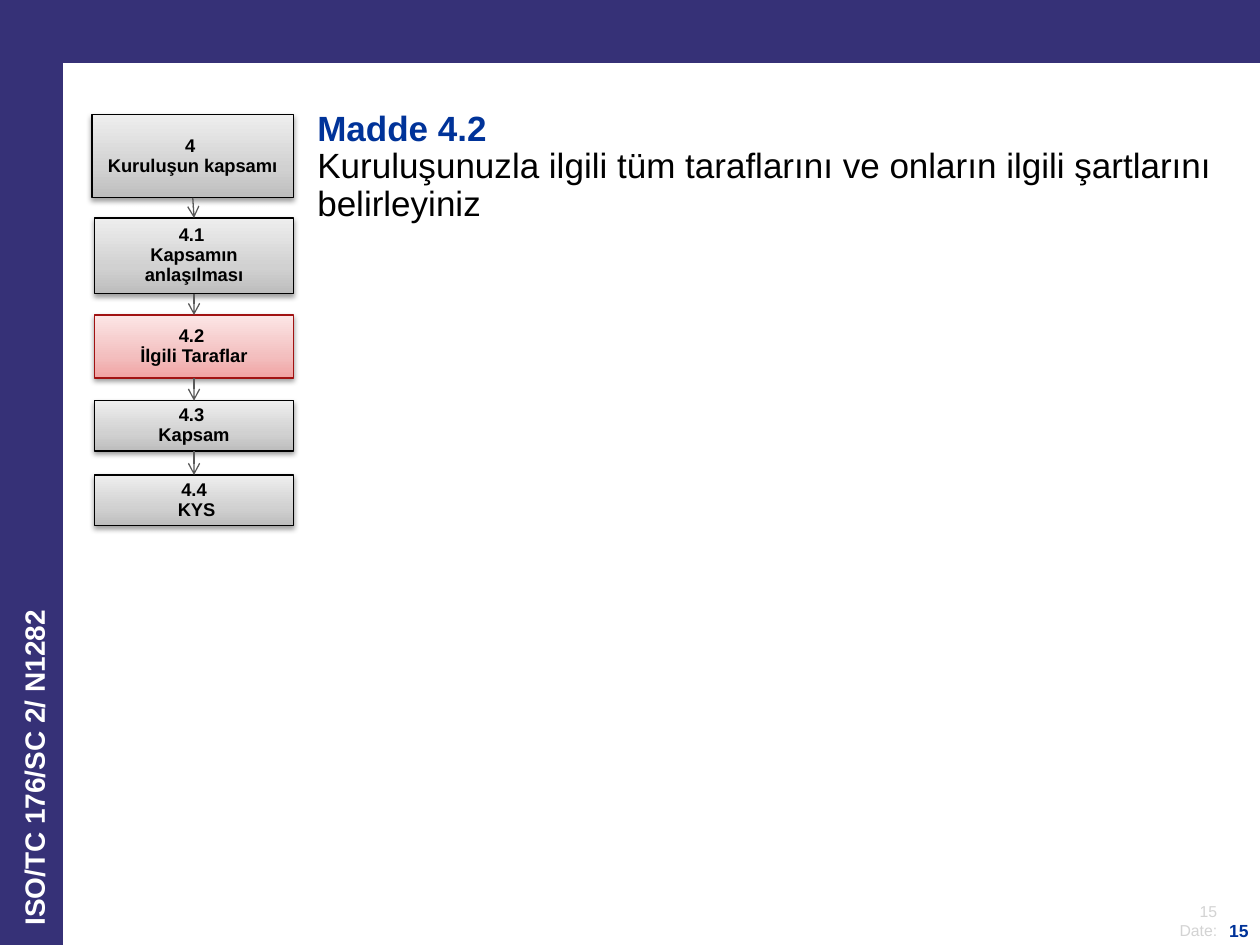
"""Build the clause 4.2 slide with its flow of clause boxes."""
from copy import deepcopy

from lxml import etree
from pptx import Presentation
from pptx import util as u
from pptx.dml.color import RGBColor
from pptx.enum import shapes, text
from pptx.oxml.ns import qn

COLORS = {
    "band": "363177", "title": "003399", "text": "000000", "white": "FFFFFF",
    "faint": "D3D3D3", "arrow": "595959", "current": "A11212",
}
GREY_STOPS = ("BDBDBD", "D1D1D1", "EEEEEE")
RED_STOPS = ("F1A3A3", "F3BFBF", "FCE6E6")
STOP_POSITIONS = (0, 0.35, 1)


class SlideBuilder:
    def __init__(self, slide, font="Arial"):
        self.slide = slide
        self.font = font

    def color(self, name):
        return RGBColor.from_string(COLORS[name])

    def add_lines(self, frame, lines, align, spacing=None):
        for index, (words, size, color, bold) in enumerate(lines):
            paragraph = frame.paragraphs[0] if index == 0 else frame.add_paragraph()
            paragraph.alignment = align
            paragraph.line_spacing = spacing
            run = paragraph.add_run()
            run.text = words
            run.font.name = self.font
            run.font.size = u.Pt(size)
            run.font.bold = bold
            run.font.color.rgb = self.color(color)

    def set_margins(self, frame, horizontal, vertical):
        frame.margin_left = frame.margin_right = u.Inches(horizontal)
        frame.margin_top = frame.margin_bottom = u.Inches(vertical)

    def rectangle(self, left, top, width, height):
        shape = self.slide.shapes.add_shape(
            shapes.MSO_SHAPE.RECTANGLE, *map(u.Inches, (left, top, width, height)))
        shape.shadow.inherit = False
        return shape

    def band(self, *place):
        shape = self.rectangle(*place)
        shape.fill.solid()
        shape.fill.fore_color.rgb = self.color("band")
        shape.line.fill.background()

    def label(self, place, lines, align=text.PP_ALIGN.LEFT, spacing=None,
              margins=(0.09, 0.04), wrap=True, rotation=0):
        box = self.slide.shapes.add_textbox(*map(u.Inches, place))
        box.rotation = rotation
        frame = box.text_frame
        frame.word_wrap = wrap
        self.set_margins(frame, *margins)
        self.add_lines(frame, lines, align, spacing)
        return frame

    def page_label(self, place, lines):
        frame = self.label(place, lines, text.PP_ALIGN.RIGHT, wrap=False)
        frame.auto_size = text.MSO_AUTO_SIZE.SHAPE_TO_FIT_TEXT
        frame.vertical_anchor = text.MSO_ANCHOR.BOTTOM

    def clause_box(self, place, lines, stops, line_color):
        shape = self.rectangle(*place)
        shape.fill.gradient()
        shape.fill.gradient_angle = 90
        stop_list = shape._element.spPr.find(".//" + qn("a:gsLst"))
        stop_list.insert(1, deepcopy(stop_list[0]))
        for stop, value, position in zip(shape.fill.gradient_stops, stops, STOP_POSITIONS):
            stop.color.rgb = RGBColor.from_string(value)
            stop.position = position
        shape.line.color.rgb = self.color(line_color)
        shape.line.width = u.Pt(0.75)
        self.drop_shadow(shape)
        frame = shape.text_frame
        frame.word_wrap = True
        frame.vertical_anchor = text.MSO_ANCHOR.MIDDLE
        self.set_margins(frame, 0.05, 0.05)
        self.add_lines(frame, [(words, 10.5, "text", True) for words in lines],
                       text.PP_ALIGN.CENTER, 0.9)

    def drop_shadow(self, shape):
        effects = shape._element.spPr.find(qn("a:effectLst"))
        shadow = etree.SubElement(
            effects, qn("a:outerShdw"), blurRad=str(u.Pt(3.1)), dist=str(u.Pt(1.6)),
            dir="5400000", rotWithShape="0")
        color = etree.SubElement(shadow, qn("a:srgbClr"), val=COLORS["text"])
        etree.SubElement(color, qn("a:alpha"), val="38000")

    def arrow(self, start, end):
        connector = self.slide.shapes.add_connector(
            shapes.MSO_CONNECTOR.STRAIGHT, *map(u.Inches, (*start, *end)))
        connector.line.color.rgb = self.color("arrow")
        connector.line.width = u.Pt(0.75)
        properties = connector._element.spPr
        etree.SubElement(properties.find(qn("a:ln")), qn("a:tailEnd"), type="arrow")
        etree.SubElement(properties, qn("a:effectLst"))


def main():
    presentation = Presentation()
    presentation.slide_width = u.Inches(10)
    presentation.slide_height = u.Inches(7.5)
    builder = SlideBuilder(presentation.slides.add_slide(presentation.slide_layouts[6]))

    builder.band(0, 0, 10, 0.5)
    builder.page_label((9.24, 7.11, 0.51, 0.39), [
        ("15", 9, "faint", False), ("Date: ", 9, "faint", False)])
    builder.band(0, 0, 0.5, 7.5)
    builder.label((-1.53, 5.32, 3.77, 0.46),
                  [("ISO/TC 176/SC 2/ N1282", 16, "white", True)],
                  spacing=0.9, rotation=270)
    builder.page_label((9.65, 7.25, 0.35, 0.26), [("15", 10, "title", True)])
    builder.label((2.42, 0.83, 7.5, 1.31), [
        ("Madde 4.2", 20, "title", True),
        ("Kuruluşunuzla ilgili tüm taraflarını ve onların ilgili şartlarını belirleyiniz",
         20, "text", False),
    ], spacing=0.9, margins=(0.1, 0.05))

    clauses = [
        ((0.73, 0.91, 1.6, 0.66), ("4 ", "Kuruluşun kapsamı")),
        ((0.75, 1.73, 1.58, 0.6), ("4.1 ", "Kapsamın anlaşılması")),
        ((0.75, 2.5, 1.58, 0.5), ("4.2 ", "İlgili Taraflar")),
        ((0.75, 3.18, 1.58, 0.4), ("4.3 ", "Kapsam")),
        ((0.75, 3.77, 1.58, 0.4), ("4.4", " KYS")),
    ]
    for place, lines in clauses:
        current = lines[0].strip() == "4.2"
        builder.clause_box(place, lines, RED_STOPS if current else GREY_STOPS,
                           "current" if current else "text")

    places = [place for place, _ in clauses]
    for upper, lower in zip(places, places[1:]):
        builder.arrow((upper[0] + upper[2] / 2, upper[1] + upper[3]),
                      (lower[0] + lower[2] / 2, lower[1]))

    presentation.save("out.pptx")


if __name__ == "__main__":
    main()
